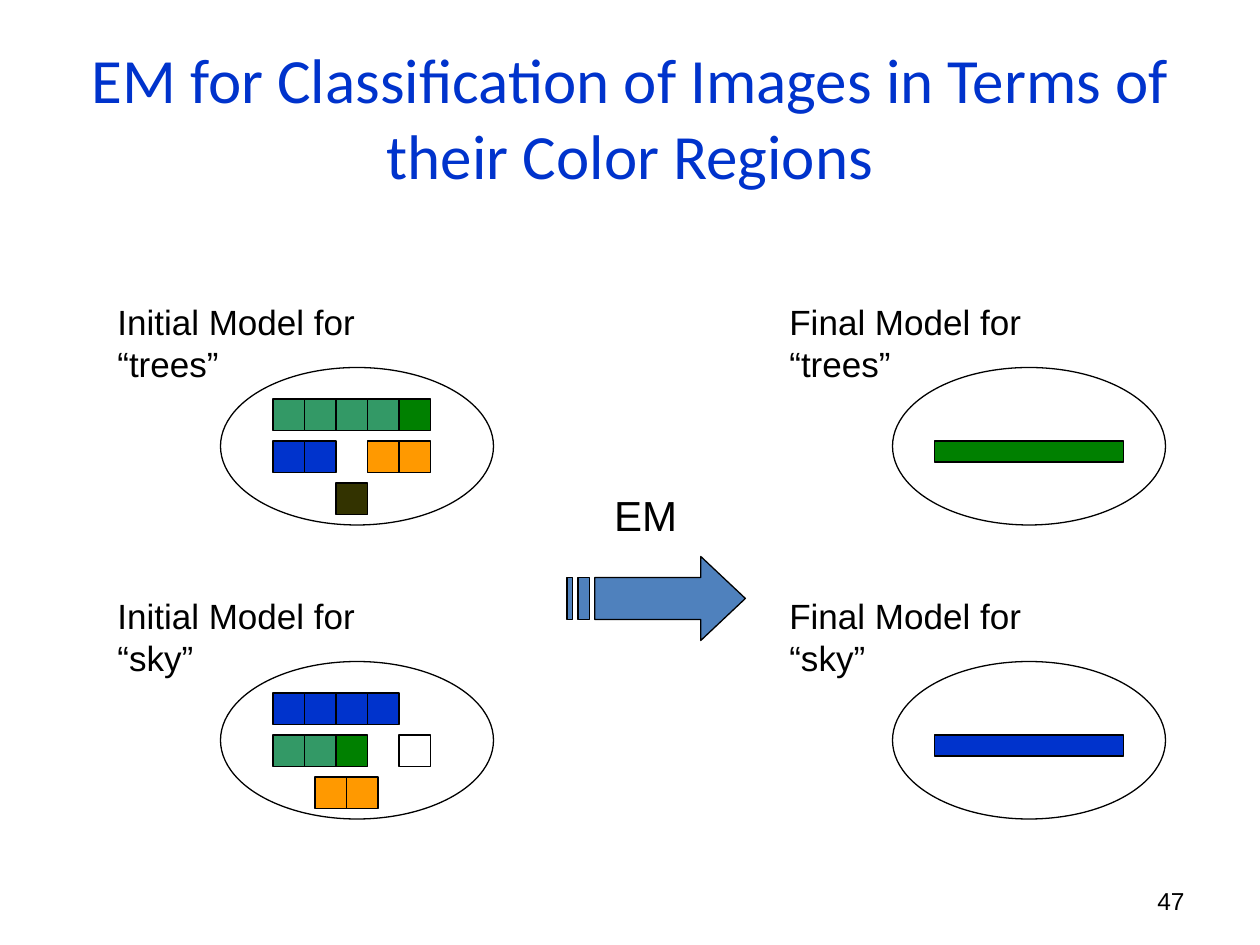
from dataclasses import dataclass

from pptx import Presentation
from pptx.dml.color import RGBColor
from pptx.enum.shapes import MSO_SHAPE
from pptx.enum.text import MSO_ANCHOR, PP_ALIGN
from pptx.util import Cm, Pt

RECT, OVAL = MSO_SHAPE.RECTANGLE, MSO_SHAPE.OVAL
LEFT, CENTER, RIGHT = PP_ALIGN.LEFT, PP_ALIGN.CENTER, PP_ALIGN.RIGHT
TOP, MIDDLE = MSO_ANCHOR.TOP, MSO_ANCHOR.MIDDLE

BLACK = RGBColor(0x00, 0x00, 0x00)
WHITE = RGBColor(0xFF, 0xFF, 0xFF)
BLUE = RGBColor(0x00, 0x33, 0xCC)
GREEN = RGBColor(0x00, 0x80, 0x00)
SEA = RGBColor(0x33, 0x99, 0x66)
ORANGE = RGBColor(0xFF, 0x99, 0x00)
OLIVE = RGBColor(0x33, 0x33, 0x00)
STEEL = RGBColor(0x4F, 0x81, 0xBD)

UNITS_PER_INCH = 12
ROWS = (10, 14, 18)


@dataclass
class Swatches:
    x: float
    y: float
    count: int
    color: RGBColor
    w: float = 3
    h: float = 3


@dataclass
class Model:
    label: str
    left: float
    top: float
    label_w: float
    swatches: list[Swatches]


MODELS = [
    Model("Final Model for “trees”", 74, 28, 34.9, [Swatches(15, 14, 1, GREEN, 18, 2)]),
    Model("Final Model for “sky”", 74, 56, 32.6, [Swatches(15, 14, 1, BLUE, 18, 2)]),
    Model("Initial Model for “trees”", 10, 28, 35.5, [
        Swatches(16, ROWS[0], 4, SEA),
        Swatches(28, ROWS[0], 1, GREEN),
        Swatches(16, ROWS[1], 2, BLUE),
        Swatches(25, ROWS[1], 2, ORANGE),
        Swatches(22, ROWS[2], 1, OLIVE),
    ]),
    Model("Initial Model for “sky”", 10, 56, 33.1, [
        Swatches(16, ROWS[0], 4, BLUE),
        Swatches(16, ROWS[1], 2, SEA),
        Swatches(22, ROWS[1], 1, GREEN),
        Swatches(28, ROWS[1], 1, WHITE),
        Swatches(20, ROWS[2], 2, ORANGE),
    ]),
]


def u(n: float) -> Cm:
    return Cm(n * 2.54 / UNITS_PER_INCH)


def style(sp, color: RGBColor | None) -> None:
    sp.shadow.inherit = False
    if color is None:
        sp.fill.background()
    else:
        sp.fill.solid()
        sp.fill.fore_color.rgb = color
    sp.line.color.rgb = BLACK
    sp.line.width = Pt(0.75)


def add_preset(s, kind, x: float, y: float, w: float, h: float,
               color: RGBColor | None = None) -> None:
    style(s.shapes.add_shape(kind, u(x), u(y), u(w), u(h)), color)


def write(tf, text: str, size: float, align, font: str = "Arial",
          color: RGBColor = BLACK) -> None:
    p = tf.paragraphs[0]
    p.alignment = align
    r = p.add_run()
    r.text = text
    r.font.name = font
    r.font.size = Pt(size)
    r.font.color.rgb = color


def add_text(s, text: str, x: float, y: float, w: float, h: float,
             size: float, align=LEFT, anchor=TOP):
    tf = s.shapes.add_textbox(u(x), u(y), u(w), u(h)).text_frame
    tf.word_wrap = True
    tf.vertical_anchor = anchor
    write(tf, text, size, align)
    return tf


def add_model(s, m: Model) -> None:
    add_preset(s, OVAL, m.left + 11, m.top + 7, 26, 15)
    tf = add_text(s, m.label, m.left, m.top, m.label_w, 5.2, 20)
    tf.margin_right = u(6)
    for sw in m.swatches:
        for i in range(sw.count):
            add_preset(s, RECT, m.left + sw.x + i * sw.w, m.top + sw.y,
                       sw.w, sw.h, sw.color)


def add_striped_arrow(s) -> None:
    top, bottom = 55, 59
    head = [(66.75, 53), (66.75, top), (56.65, top), (56.65, bottom),
            (66.75, bottom), (66.75, 61), (71, 57)]
    stripes = [[(x1, top), (x1, bottom), (x2, bottom), (x2, top)]
               for x1, x2 in ((55.06, 56.12), (54, 54.53))]
    start, *rest = [(u(x), u(y)) for x, y in head]
    fb = s.shapes.build_freeform(*start)
    fb.add_line_segments(rest)
    for stripe in stripes:
        start, *rest = [(u(x), u(y)) for x, y in stripe]
        fb.move_to(*start)
        fb.add_line_segments(rest)
    style(fb.convert_to_shape(), STEEL)


def main() -> None:
    prs = Presentation()
    prs.slide_width, prs.slide_height = Cm(25.4), Cm(19.05)
    s = prs.slides.add_slide(prs.slide_layouts[5])

    title = s.shapes.title
    title.left, title.top, title.width, title.height = u(6), u(3.6), u(108), u(15)
    title.text_frame.vertical_anchor = MIDDLE
    write(title.text_frame,
          "EM for Classification of Images in Terms of their Color Regions",
          36, CENTER, "Calibri", BLUE)

    for m in MODELS:
        add_model(s, m)
    add_striped_arrow(s)
    add_text(s, "EM", 56, 46, 11, 6, 24, CENTER)
    add_text(s, "47", 86, 83.4, 28, 4.8, 14, RIGHT, MIDDLE)
    prs.save("out.pptx")


if __name__ == "__main__":
    main()
